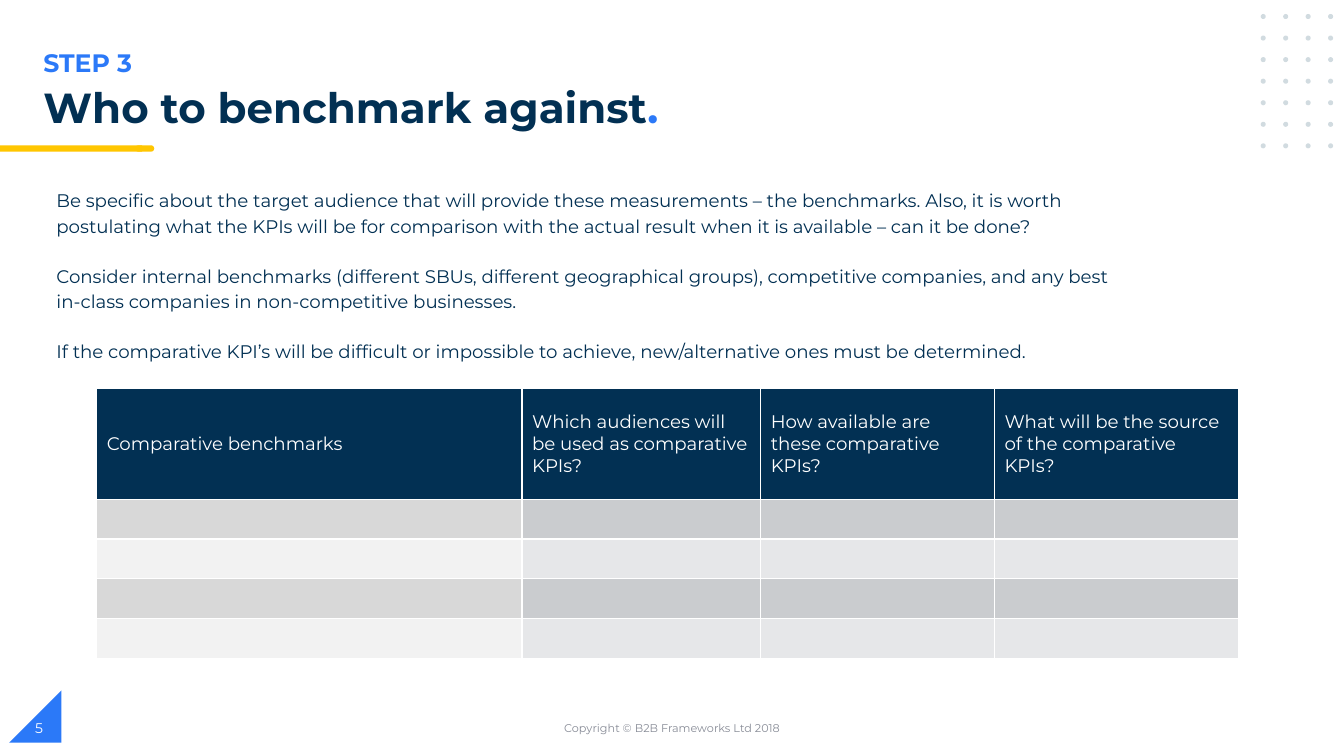
from dataclasses import dataclass
from itertools import product

from pptx import Presentation
from pptx.dml.color import RGBColor
from pptx.enum.shapes import MSO_SHAPE as Kind
from pptx.enum.text import MSO_ANCHOR as Anchor, MSO_AUTO_SIZE as Fit, PP_ALIGN as Align
from pptx.util import Pt

FACE = "Montserrat"
NAVY, BLUE, GOLD, WHITE = "023053", "2B79F8", "FFC600", "FFFFFF"
DOT, GREY = "D1DBE0", "888C97"


@dataclass
class Box:
    x: float
    y: float
    w: float
    h: float

    def pts(self) -> tuple:
        return Pt(self.x), Pt(self.y), Pt(self.w), Pt(self.h)


@dataclass
class Label:
    text: str
    box: Box
    size: float
    hue: str
    bold: bool = False
    align: Align = Align.LEFT
    anchor: Anchor = Anchor.MIDDLE


@dataclass
class Mark:
    kind: Kind
    box: Box
    hue: str
    turn: float = 0


BODY = [
    "Be specific about the target audience that will provide these measurements – the benchmarks. "
    "Also, it is worth postulating what the KPIs will be for comparison with the actual result "
    "when it is available – can it be done?",
    "Consider internal benchmarks (different SBUs, different geographical groups), competitive "
    "companies, and any best in-class companies in non-competitive businesses.",
    "If the comparative KPI’s will be difficult or impossible to achieve, new/alternative ones "
    "must be determined.",
]
HEADS = [
    "Comparative benchmarks",
    "Which audiences will be used as comparative KPIs?",
    "How available are these comparative KPIs?",
    "What will be the source of the comparative KPIs?",
]
WIDTHS = [303.8, 170.5, 167, 174.7]
BANDS = [("D8D8D8", "CACCCF"), ("F2F2F2", "E6E7E9")]
HEAD_H, ROW_H, ROWS = 79.5, 28.4, 4

MARKS = [
    Mark(Kind.RIGHT_TRIANGLE, Box(6.5, 493.2, 37.3, 37.3), BLUE, 270),
    Mark(Kind.FLOWCHART_TERMINATOR, Box(96.5, 103.8, 13.7, 4.5), GOLD),
    Mark(Kind.RECTANGLE, Box(0, 103.8, 101.5, 4.5), GOLD),
] + [
    Mark(Kind.OVAL, Box(900.5 + 16.05 * col, 10 + 15.4 * row, 3.6, 3.6), DOT)
    for row, col in product(range(7), range(4))
]
LABELS = [
    Label("Copyright © B2B Frameworks Ltd 2018", Box(318.2, 505.4, 324, 28.8), 8, GREY,
          align=Align.CENTER),
    Label("5", Box(18, 505.4, 216, 28.8), 10, WHITE),
    Label("STEP 3", Box(23.8, 30.2, 481.7, 29), 18, BLUE, True, anchor=Anchor.TOP),
]


def tint(hue: str) -> RGBColor:
    return RGBColor.from_string(hue)


def style(para, size: float, hue: str, bold: bool = False) -> None:
    font = para.font
    font.name, font.size, font.bold = FACE, Pt(size), bold
    font.color.rgb = tint(hue)


def place(shape, box: Box) -> None:
    shape.left, shape.top, shape.width, shape.height = box.pts()


def frame(shape, anchor: Anchor):
    text = shape.text_frame
    text.word_wrap, text.auto_size = True, Fit.NONE
    text.vertical_anchor = anchor
    return text


def add_mark(slide, mark: Mark) -> None:
    shape = slide.shapes.add_shape(mark.kind, *mark.box.pts())
    shape.shadow.inherit = False
    shape.fill.solid()
    shape.fill.fore_color.rgb = tint(mark.hue)
    shape.line.fill.background()
    shape.rotation = mark.turn


def add_label(slide, label: Label) -> None:
    shape = slide.shapes.add_textbox(*label.box.pts())
    para = frame(shape, label.anchor).paragraphs[0]
    para.text, para.alignment = label.text, label.align
    style(para, label.size, label.hue, label.bold)


def fill_title(shape) -> None:
    place(shape, Box(23.8, 59, 535, 40.3))
    para = frame(shape, Anchor.TOP).paragraphs[0]
    para.alignment, para.line_spacing = Align.LEFT, 0.9
    style(para, 30, NAVY, True)
    for text, hue in [("Who to benchmark against", NAVY), (".", BLUE)]:
        run = para.add_run()
        run.text = text
        run.font.color.rgb = tint(hue)


def fill_body(shape) -> None:
    place(shape, Box(33.1, 129.6, 771.1, 153.4))
    text = frame(shape, Anchor.TOP)
    for num, words in enumerate(BODY):
        para = text.add_paragraph() if num else text.paragraphs[0]
        para.text = words
        props = para._p.get_or_add_pPr()
        props.set("marL", "0")
        props.set("indent", "0")
        props.append(props.makeelement(
            "{http://schemas.openxmlformats.org/drawingml/2006/main}buNone", {}))
        para.line_spacing = 1.15
        para.space_before = Pt(18 if num else 0)
        style(para, 13, NAVY)


def add_grid(slide) -> None:
    box = Box(69.1, 277.2, sum(WIDTHS), HEAD_H + ROWS * ROW_H)
    grid = slide.shapes.add_table(ROWS + 1, len(HEADS), *box.pts()).table
    grid.horz_banding = False
    for col, width in zip(grid.columns, WIDTHS):
        col.width = Pt(width)
    for num, row in enumerate(grid.rows):
        row.height = Pt(ROW_H if num else HEAD_H)
        for col, cell in enumerate(row.cells):
            cell.margin_top = cell.margin_bottom = 0
            cell.vertical_anchor = Anchor.MIDDLE
            cell.fill.solid()
            hue = BANDS[(num - 1) % 2][min(col, 1)] if num else NAVY
            cell.fill.fore_color.rgb = tint(hue)
            para = cell.text_frame.paragraphs[0]
            if not num:
                para.text = HEADS[col]
            style(para, 13, NAVY if num else WHITE)


def main() -> None:
    deck = Presentation()
    deck.slide_width, deck.slide_height = Pt(960), Pt(540)
    slide = deck.slides.add_slide(deck.slide_layouts[1])
    for mark in MARKS:
        add_mark(slide, mark)
    fill_body(slide.placeholders[1])
    fill_title(slide.shapes.title)
    add_grid(slide)
    for label in LABELS:
        add_label(slide, label)
    deck.save("out.pptx")


if __name__ == "__main__":
    main()
